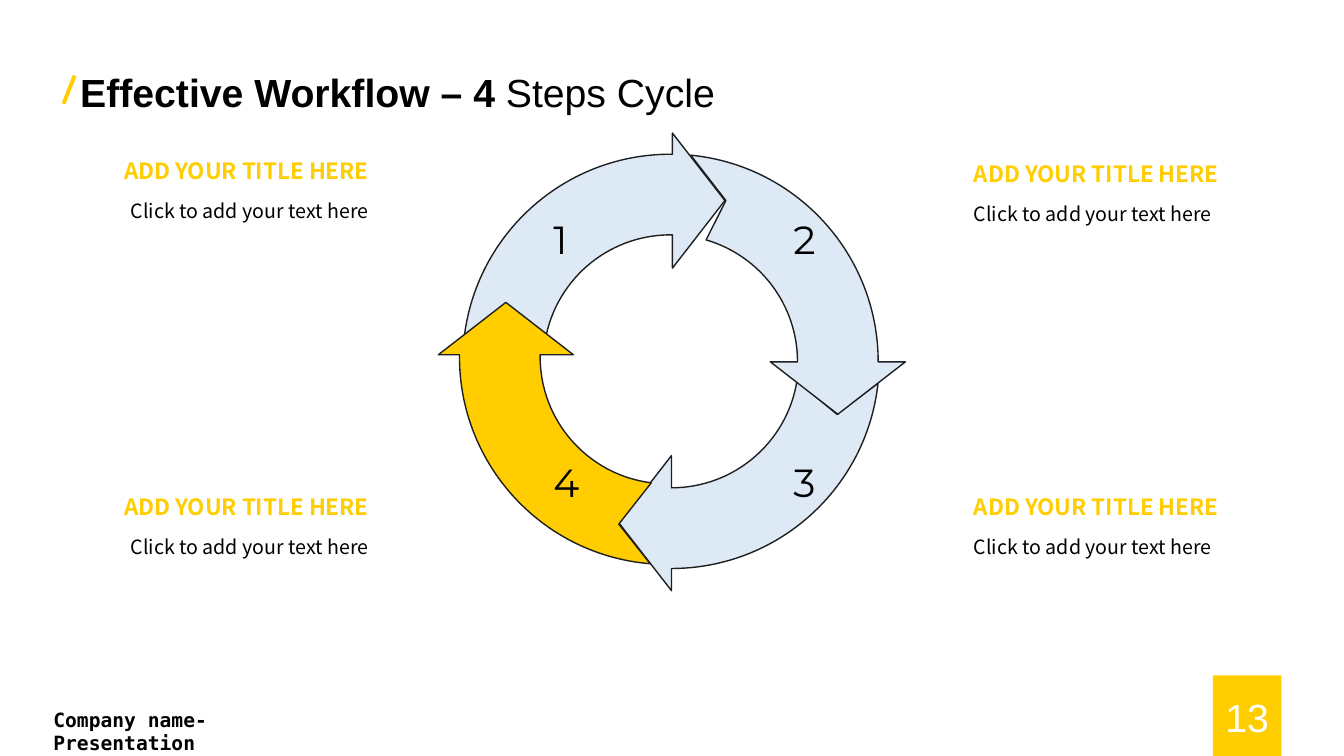
import math

from lxml import etree
from pptx import Presentation
from pptx import util as u
from pptx.dml.color import RGBColor
from pptx.enum import shapes, text
from pptx.oxml.ns import qn

WIDTH, HEIGHT = u.Inches(13.33), u.Inches(7.5)
YELLOW = RGBColor(0xFF, 0xCD, 0x00)
PALE_BLUE = RGBColor(0xDD, 0xEA, 0xF6)
OUTLINE = RGBColor(0x1F, 0x1F, 0x1F)
BLACK = RGBColor(0, 0, 0)
WHITE = RGBColor(0xFF, 0xFF, 0xFF)
BODY_FONT = "Noto Sans CJK SC"
LEFT, CENTER, RIGHT = (text.PP_ALIGN.LEFT, text.PP_ALIGN.CENTER,
                       text.PP_ALIGN.RIGHT)

# Ring measures in inches
OUTER, INNER = 2.06, 1.26
HEAD_LENGTH, HEAD_HALF = 0.52, 0.67

# From back to front: quarter turns, rotation, centre, fill,
# outer and inner tail angles, notch, head base and head radius
ARROWS = [
    (2, 0, (6.66, 3.58), PALE_BLUE, 186.2, 189.2, (-1.64, -0.53), 0, 1.61),
    (1, 0, (6.65, 3.59), PALE_BLUE, 185.6, 196.3, (-1.6, -0.55), 0, 1.66),
    (0, 0, (6.65, 3.59), PALE_BLUE, 184.7, 187.2, (-1.66, -0.48), 0.02, 1.6),
    (0, 270, (6.16, 5.51), YELLOW, 184.7, 187.2, (-1.66, -0.48), 0.02, 1.6),
]

# Left, top and alignment of each caption, in percent of the slide
HEADING_WIDTH, BODY_WIDTH = 21.08, 23.48
CAPTIONS = [(4.7, 20.13, RIGHT), (71.72, 20.53, LEFT),
            (71.72, 64.6, LEFT), (4.7, 64.6, RIGHT)]
NUMBERS = [(40.44, 27.87), (58.29, 27.87), (58.29, 60), (40.44, 60)]


def across(percent):
    return round(WIDTH * percent / 100)


def down(percent):
    return round(HEIGHT * percent / 100)


def place(left, top, width, height):
    return across(left), down(top), across(width), down(height)


def add_span(para, words, size, color, font="Arial", bold=False):
    span = para.add_run()
    span.text = words
    span.font.size = u.Pt(size)
    span.font.name = font
    span.font.bold = bold
    span.font.color.rgb = color


def add_text(page, area, words, size, color, font, align=LEFT, bold=False,
             spacing=None):
    box = page.shapes.add_textbox(*place(*area))
    box.text_frame.word_wrap = True
    box.text_frame.auto_size = text.MSO_AUTO_SIZE.SHAPE_TO_FIT_TEXT
    para = box.text_frame.paragraphs[0]
    para.alignment = align
    if spacing:
        para.line_spacing = spacing
    add_span(para, words, size, color, font, bold)


def arc(radius, start, end):
    """Return the start, two control points and end of one Bezier arc."""
    first, last = math.radians(start), math.radians(end)
    pull = 4 / 3 * math.tan((last - first) / 4)

    def point(angle, tangent):
        return (radius * (math.cos(angle) - tangent * math.sin(angle)),
                radius * (math.sin(angle) + tangent * math.cos(angle)))

    return [point(first, 0), point(first, pull),
            point(last, -pull), point(last, 0)]


def curve_segments(arrow, starts):
    """Turn each run of three line segments into one cubic curve."""
    lines = list(arrow.element.iter(qn("a:lnTo")))
    for start in starts:
        curve = etree.Element(qn("a:cubicBezTo"))
        lines[start].addprevious(curve)
        for line in lines[start:start + 3]:
            curve.append(line[0])
            line.getparent().remove(line)


def add_arrow(page, turns, rotation, center, fill, outer_tail, inner_tail,
              notch, base, middle):
    head = [(base, -OUTER), (base, -middle - HEAD_HALF),
            (base + HEAD_LENGTH, -middle), (base, -middle + HEAD_HALF),
            (base, -INNER)]
    outer_arc = arc(OUTER, outer_tail, 270)
    points = outer_arc + head + arc(INNER, 270, inner_tail) + [notch]
    for _ in range(turns):
        points = [(-y, x) for x, y in points]
    points = [(u.Inches(center[0] + x), u.Inches(center[1] + y))
              for x, y in points]
    builder = page.shapes.build_freeform(*points[0])
    builder.add_line_segments(points[1:], close=True)
    arrow = builder.convert_to_shape()
    curve_segments(arrow, (0, len(outer_arc) + len(head)))
    arrow.rotation = rotation
    arrow.shadow.inherit = False
    arrow.fill.solid()
    arrow.fill.fore_color.rgb = fill
    arrow.line.color.rgb = OUTLINE
    arrow.line.width = u.Pt(1)


def add_caption(page, left, top, align):
    indent = BODY_WIDTH - HEADING_WIDTH if align == RIGHT else 0
    add_text(page, (left + indent, top, HEADING_WIDTH, 4.93),
             "ADD YOUR TITLE HERE", 16, YELLOW, BODY_FONT, align, bold=True)
    add_text(page, (left, top + 4.9, BODY_WIDTH, 5.07),
             "Click to add your text here", 14, BLACK, BODY_FONT, align,
             spacing=1.2)


def format_title(page):
    title = page.shapes.title
    title.left, title.top, title.width, title.height = place(
        5.22, 8.33, 51.16, 7.6)
    title.text_frame.auto_size = text.MSO_AUTO_SIZE.SHAPE_TO_FIT_TEXT
    title.text_frame.vertical_anchor = text.MSO_ANCHOR.MIDDLE
    para = title.text_frame.paragraphs[0]
    para.alignment = LEFT
    add_span(para, "Effective Workflow – 4", 28, BLACK, bold=True)
    add_span(para, " Steps Cycle", 28, BLACK)


def add_slash(page):
    slash = page.shapes.add_connector(
        shapes.MSO_CONNECTOR.STRAIGHT,
        across(5.55), down(10), across(4.73), down(13.73))
    slash.line.color.rgb = YELLOW
    slash.line.width = u.Pt(2.75)
    etree.SubElement(slash.element.spPr, qn("a:effectLst"))


def add_page_number(page):
    badge = page.shapes.add_shape(shapes.MSO_SHAPE.RECTANGLE,
                                  *place(90.25, 89.33, 5.1, 10.93))
    badge.shadow.inherit = False
    badge.fill.solid()
    badge.fill.fore_color.rgb = YELLOW
    badge.line.fill.background()
    frame = badge.text_frame
    frame.vertical_anchor = text.MSO_ANCHOR.MIDDLE
    frame.paragraphs[0].alignment = CENTER
    add_span(frame.paragraphs[0], "13", 28, WHITE)


def main():
    deck = Presentation()
    deck.slide_width, deck.slide_height = WIDTH, HEIGHT
    page = deck.slides.add_slide(deck.slide_layouts[5])

    # Cycle
    for arrow in ARROWS:
        add_arrow(page, *arrow)

    # Title and footer
    format_title(page)
    add_slash(page)
    add_page_number(page)
    add_text(page, (3.23, 92.93, 23.33, 4.53), "Company name-Presentation",
             14, BLACK, "DejaVu Sans Mono", bold=True)

    # Captions and step numbers
    for caption in CAPTIONS:
        add_caption(page, *caption)
    for number, (left, top) in enumerate(NUMBERS, start=1):
        add_text(page, (left, top, 2.1, 7.6), str(number), 28, BLACK,
                 "Montserrat", CENTER)

    deck.save("out.pptx")


main()
